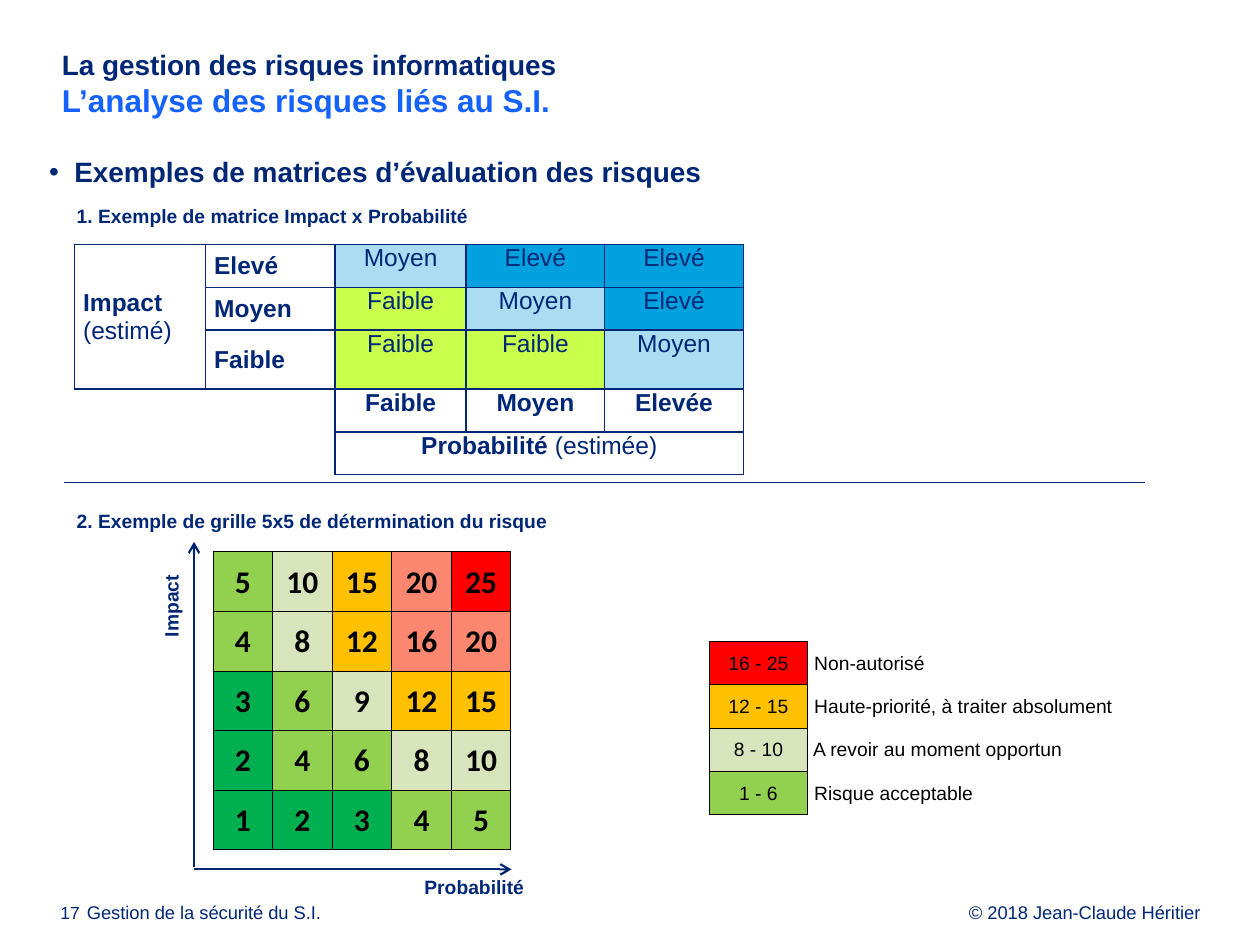
from dataclasses import dataclass

from lxml import etree
from pptx import Presentation
from pptx import util as u
from pptx.dml.color import RGBColor
from pptx.enum import shapes, text
from pptx.oxml import ns

LEFT, MID, RIGHT = text.PP_ALIGN.LEFT, text.PP_ALIGN.CENTER, text.PP_ALIGN.RIGHT
TOP, CORE = text.MSO_ANCHOR.TOP, text.MSO_ANCHOR.MIDDLE


@dataclass(frozen=True)
class Theme:
    font: str = "Arial"
    digit: str = "Calibri"
    navy: str = "002776"
    axis: str = "002673"
    blue: str = "1462FF"
    black: str = "000000"
    dark: str = "00B050"
    green: str = "92D050"
    beige: str = "D7E4BC"
    amber: str = "FFC000"
    salmon: str = "FC8770"
    red: str = "FF0000"
    lime: str = "C7FF4C"
    pale: str = "AADDF1"
    cyan: str = "00A1DE"
    page: float = 10
    foot: float = 10.5
    label: float = 11
    cell: float = 14
    head: float = 16
    big: float = 18


T = Theme()
LEVELS = {"Faible": T.lime, "Moyen": T.pale, "Elevé": T.cyan}
SCALE = [(3, T.dark), (6, T.green), (10, T.beige), (15, T.amber), (20, T.salmon), (25, T.red)]


def add_run(para, words, size, color=T.navy, bold=False, font=T.font):
    run = para.add_run()
    run.text = words
    run.font.name, run.font.size, run.font.bold = font, u.Pt(size), bold
    run.font.color.rgb = RGBColor.from_string(color)


def add_box(slide, place, inset=None, wrap=True):
    box = slide.shapes.add_textbox(*map(u.Inches, place))
    frame = box.text_frame
    frame.word_wrap = wrap
    if inset is None:
        frame.auto_size = text.MSO_AUTO_SIZE.SHAPE_TO_FIT_TEXT
    else:
        frame.margin_left = u.Inches(inset)
        frame.margin_top = frame.margin_right = frame.margin_bottom = 0
    return box


def add_label(slide, words, place, turn=0):
    box = add_box(slide, place, wrap=False)
    box.rotation = turn
    add_run(box.text_frame.paragraphs[0], words, T.label, bold=True)


def add_foot(slide, words, left, width, size=T.foot, align=LEFT):
    para = add_box(slide, (left, 7.18, width, 0.16), 0).text_frame.paragraphs[0]
    para.alignment, para.line_spacing = align, u.Pt(10.8)
    add_run(para, words, size)


def add_line(slide, start, end, width, arrow=False):
    line = slide.shapes.add_connector(
        shapes.MSO_CONNECTOR.STRAIGHT, *map(u.Inches, start + end))
    line.line.color.rgb = RGBColor.from_string(T.axis)
    line.line.width = u.Pt(width)
    if arrow:
        etree.SubElement(line.line._get_or_add_ln(), ns.qn("a:tailEnd"), type="arrow")
    etree.SubElement(line._element.spPr, ns.qn("a:effectLst"))


def add_table(slide, left, top, cols, rows):
    size = map(u.Inches, (left, top, sum(cols), sum(rows)))
    table = slide.shapes.add_table(len(rows), len(cols), *size).table
    table.first_row = table.horz_banding = False
    for col, width in zip(table.columns, cols):
        col.width = u.Inches(width)
    for row, height in zip(table.rows, rows):
        row.height = u.Inches(height)
    return table


def set_cell(cell, color, width, fill=None, sides="LRTB", inset=(0.01, 0.01), anchor=TOP):
    cell.margin_left = cell.margin_right = u.Inches(inset[0])
    cell.margin_top, cell.margin_bottom = u.Inches(inset[1]), 0
    cell.vertical_anchor = anchor
    props = cell._tc.get_or_add_tcPr()
    for side in "LRTB":
        edge = etree.SubElement(props, ns.qn("a:ln" + side), w=str(u.Pt(width)))
        if side in sides:
            solid = etree.SubElement(edge, ns.qn("a:solidFill"))
            etree.SubElement(solid, ns.qn("a:srgbClr"), val=color)
        else:
            etree.SubElement(edge, ns.qn("a:noFill"))
    if fill:
        cell.fill.solid()
        cell.fill.fore_color.rgb = RGBColor.from_string(fill)
    else:
        cell.fill.background()


def fill_cell(cell, runs, size=T.cell, align=LEFT, gap=None, **style):
    para = cell.text_frame.paragraphs[0]
    para.alignment = align
    if gap:
        para.space_before = para.space_after = u.Pt(gap)
    for words, bold in runs:
        add_run(para, words, size, bold=bold, **style)


def add_matrix(slide):
    rates = [("Elevé", "Moyen Elevé Elevé"), ("Moyen", "Faible Moyen Elevé"),
             ("Faible", "Faible Faible Moyen")]
    table = add_table(slide, 0.59, 1.94, [1.04, 1.03, 1.04, 1.1, 1.1], [0.34] * 5)
    blank = {(3, 0): "T", (3, 1): "TR", (4, 0): "", (4, 1): "R"}
    for row in range(5):
        marks = rates[row][1].split() if row < 3 else []
        for col in range(5):
            level = marks[col - 2] if marks and col > 1 else None
            cell = table.cell(row, col)
            set_cell(cell, T.navy, 1, LEVELS.get(level), blank.get((row, col), "LRTB"),
                     (0.07, 0), CORE if marks and col < 2 else TOP)
            if level:
                fill_cell(cell, [(level, False)], align=MID, gap=6)
        if marks:
            fill_cell(table.cell(row, 1), [(rates[row][0], True)])
    table.cell(0, 0).merge(table.cell(2, 0))
    table.cell(4, 2).merge(table.cell(4, 4))
    fill_cell(table.cell(0, 0), [("Impact", True)])
    add_run(table.cell(0, 0).text_frame.add_paragraph(), "(estimé)", T.cell)
    for col, words in enumerate(["Faible", "Moyen", "Elevée"], 2):
        fill_cell(table.cell(3, col), [(words, True)], align=MID)
    fill_cell(table.cell(4, 2), [("Probabilité ", True), ("(estimée)", False)], align=MID)


def add_grid(slide):
    table = add_table(slide, 1.69, 4.38, [0.473] * 5, [0.473] * 5)
    for row in range(5):
        for col in range(5):
            score = (5 - row) * (col + 1)
            fill = next(color for top, color in SCALE if score <= top)
            cell = table.cell(row, col)
            set_cell(cell, T.black, 0.5, fill, anchor=CORE)
            fill_cell(cell, [(str(score), True)], T.big, MID, color=T.black, font=T.digit)


def add_legend(slide):
    items = [("16 - 25", " Non-autorisé", T.red),
             ("12 - 15", " Haute-priorité, à traiter absolument", T.amber),
             ("8 - 10", " A revoir au moment opportun", T.beige),
             ("1 - 6", " Risque acceptable", T.green)]
    table = add_table(slide, 5.63, 5.09, [0.78, 3], [0.344] * 4)
    for row, (span, words, fill) in enumerate(items):
        key, note = table.cell(row, 0), table.cell(row, 1)
        set_cell(key, T.black, 0.5, fill, anchor=CORE)
        set_cell(note, T.black, 0.5, sides="L", anchor=CORE)
        fill_cell(key, [(span, False)], T.label, MID, color=T.black)
        fill_cell(note, [(words, False)], T.label, color=T.black)


def add_title(slide):
    para = add_box(slide, (0.45, 0.38, 9.21, 0.69), 0.04).text_frame.paragraphs[0]
    add_run(para, "La gestion des risques informatiques", T.head, bold=True)
    para.add_line_break()
    add_run(para, "L’analyse des risques liés au S.I.", T.big, T.blue, True)


def add_bullet(slide):
    para = add_box(slide, (0.35, 1.23, 9.21, 0.3), 0.04).text_frame.paragraphs[0]
    para.space_after = u.Pt(2.7)
    props = para._p.get_or_add_pPr()
    props.set("marL", str(u.Inches(0.2)))
    props.set("indent", str(u.Inches(-0.2)))
    etree.SubElement(props, ns.qn("a:buFont"), typeface=T.font)
    etree.SubElement(props, ns.qn("a:buChar"), char="•")
    add_run(para, "Exemples de matrices d’évaluation des risques", T.head, bold=True)


def main():
    deck = Presentation()
    deck.slide_width, deck.slide_height = u.Inches(10), u.Inches(7.5)
    slide = deck.slides.add_slide(deck.slide_layouts[6])
    add_foot(slide, "© 2018 Jean-Claude Héritier", 7, 2.53, align=RIGHT)
    add_foot(slide, "Gestion de la sécurité du S.I.", 0.69, 2.53)
    add_foot(slide, "17", 0.48, 0.26, T.page)
    add_title(slide)
    add_bullet(slide)
    add_grid(slide)
    add_line(slide, (1.54, 6.9), (4.06, 6.9), 1.25, True)
    add_line(slide, (1.54, 6.88), (1.54, 4.3), 1.25, True)
    add_label(slide, "2. Exemple de grille 5x5 de détermination du risque", (0.51, 3.99, 4, 0.29))
    add_label(slide, "Probabilité", (3.27, 6.9, 1, 0.29))
    add_label(slide, "Impact", (1.01, 4.66, 0.7, 0.29), 270)
    add_legend(slide)
    add_matrix(slide)
    add_label(slide, "1. Exemple de matrice Impact x Probabilité", (0.51, 1.57, 3.32, 0.29))
    add_line(slide, (0.51, 3.83), (9.09, 3.83), 0.75)
    deck.save("out.pptx")


if __name__ == "__main__":
    main()
